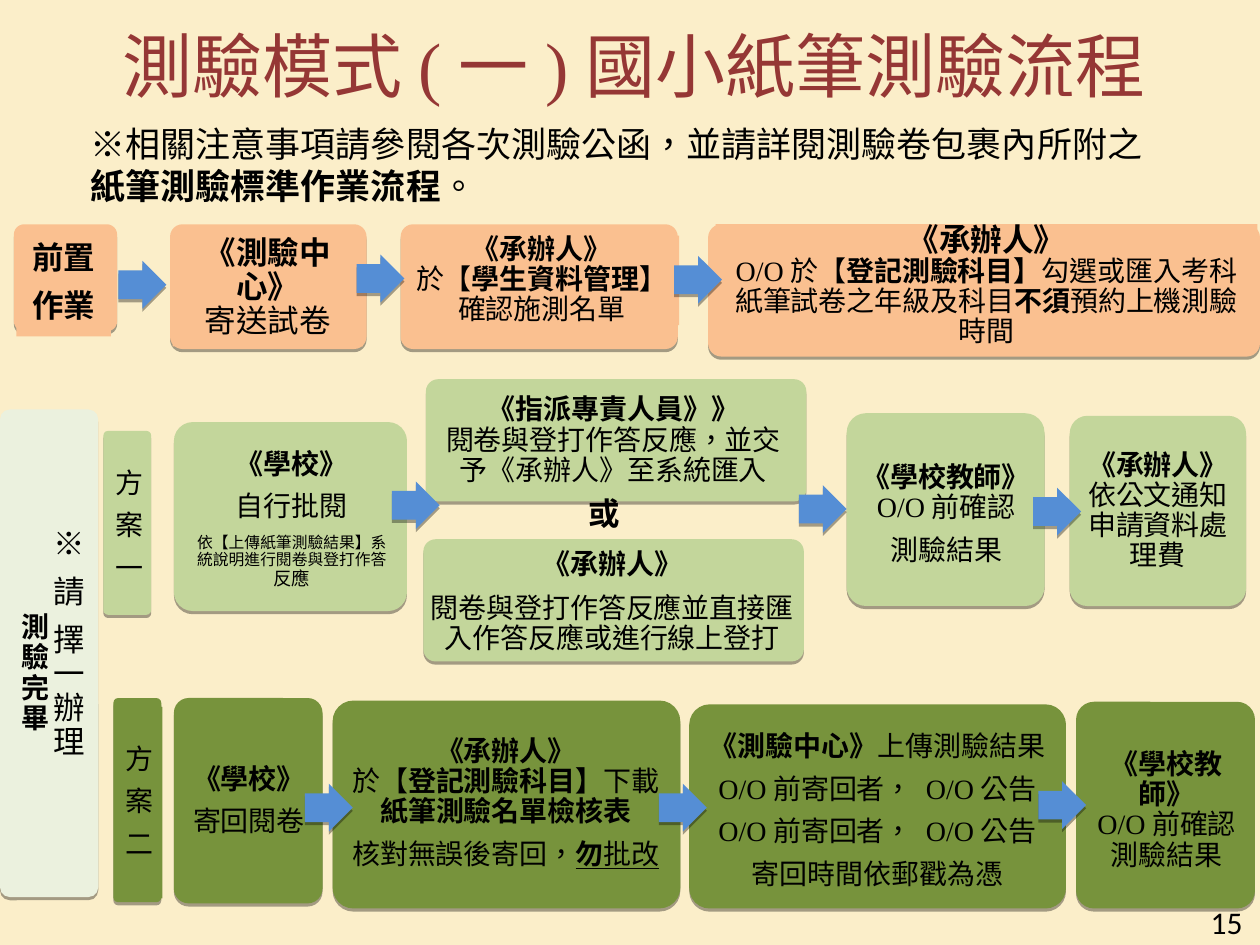
from lxml import etree
from pptx import Presentation
from pptx.dml.color import RGBColor
from pptx.enum import shapes, text
from pptx.oxml import ns
from pptx.util import Pt

PX = 9144


class Theme:
    page, title, ink = "FBEEC9", "953735", "000000"
    prep, plan_one, plan_two = "FAC090", "C3D69B", "77933C"
    sidebar, arrow = "EBF1DE", "558ED5"
    cjk, serif, sans = "Noto Sans CJK SC", "Times New Roman", "Calibri"
    heading, note, large, body = Pt(40), Pt(20), Pt(18), Pt(16)
    marks = {
        "*": {"bold": True},
        "_": {"underline": True},
        "^": {"size": large},
        "-": {"size": Pt(9)},
        "~": {"size": Pt(10.5)},
    }


PLAIN = {}
OPEN = {"line_spacing": 0.9, "space_after": Pt(7)}
WIDE = {"line_spacing": 0.9, "space_after": Pt(8)}
TIGHT = {"line_spacing": Pt(17), "space_after": Pt(0)}
TIGHT_END = {"line_spacing": Pt(17), "space_after": Pt(7)}
CENTER = text.PP_ALIGN.CENTER


def emu(box):
    return [length * PX for length in box]


def within(box, part):
    return (box[0] + part[0], box[1] + part[1], *part[2:])


def paint(fill, color):
    fill.solid()
    fill.fore_color.rgb = RGBColor.from_string(color)


def apply(target, values):
    for name, value in values.items():
        setattr(target, name, value)


def add_shadow(shape):
    effects = etree.SubElement(shape.element.spPr, ns.qn("a:effectLst"))
    shadow = etree.SubElement(effects, ns.qn("a:outerShdw"), dist="23000",
                              dir="5400000", rotWithShape="0")
    black = etree.SubElement(shadow, ns.qn("a:srgbClr"), val=Theme.ink)
    etree.SubElement(black, ns.qn("a:alpha"), val="35000")


def add_run(paragraph, marked, size, face, color):
    style = {"size": size, "bold": False}
    while marked[0] in Theme.marks:
        style.update(Theme.marks[marked[0]])
        marked = marked[1:]
    run = paragraph.add_run()
    run.text = marked.rstrip("\n")
    style["name"] = Theme.serif if marked.startswith("O/O") else face
    apply(run.font, style)
    run.font.color.rgb = RGBColor.from_string(color)
    properties = run.font._element
    properties.set("lang", "zh-TW")
    east_asian = etree.SubElement(properties, ns.qn("a:ea"), typeface=Theme.cjk)
    properties.find(ns.qn("a:latin")).addnext(east_asian)
    if marked.endswith("\n"):
        paragraph.add_line_break()


def write(shape, paragraphs, align=CENTER, size=Theme.body, face=Theme.cjk,
          color=Theme.ink, anchor=text.MSO_ANCHOR.MIDDLE, inset=None):
    frame = shape.text_frame
    apply(frame, {"word_wrap": True, "vertical_anchor": anchor})
    if inset is not None:
        for side in ("left", "top", "right", "bottom"):
            setattr(frame, f"margin_{side}", inset * PX)
    for index, (spacing, content) in enumerate(paragraphs):
        paragraph = frame.add_paragraph() if index else frame.paragraphs[0]
        apply(paragraph, {"alignment": align, **spacing})
        for marked in content.split("|"):
            add_run(paragraph, marked, size, face, color)


def add_block(parent, kind, box, color):
    block = parent.add_shape(kind, *emu(box))
    block.shadow.inherit = False
    paint(block.fill, color)
    block.line.fill.background()
    return block


def add_card(slide, box, inner, color, paragraphs, filled=True):
    parts = slide.shapes.add_group_shape().shapes
    back = add_block(parts, shapes.MSO_SHAPE.ROUNDED_RECTANGLE, box, color)
    back.adjustments[0] = 0.1
    back.element.spPr.remove(back.element.spPr.find(ns.qn("a:effectLst")))
    add_shadow(back)
    label_box = within(box, inner)
    if filled:
        label = add_block(parts, shapes.MSO_SHAPE.RECTANGLE, label_box, color)
    else:
        label = parts.add_textbox(*emu(label_box))
    write(label, paragraphs, inset=8)


def add_arrows(slide, region, corners):
    for corner in corners:
        arrow = add_block(slide.shapes, shapes.MSO_SHAPE.RIGHT_ARROW,
                          within(region, (*corner, 38, 38)), Theme.arrow)
        arrow.adjustments[0], arrow.adjustments[1] = 0.6, 0.5
        arrow.element.spPr.remove(arrow.element.spPr.find(ns.qn("a:effectLst")))
        add_shadow(arrow)


def add_row(slide, region, color, cards, arrows):
    for box, inner, filled, paragraphs in cards:
        add_card(slide, within(region, box), inner, color, paragraphs, filled)
    add_arrows(slide, region, arrows)


def add_header(slide, region):
    title = slide.shapes.title
    apply(title, dict(zip(("left", "top", "width", "height"),
                          emu(within(region, (0, 0, 900, 112))))))
    write(title, [(PLAIN, "測驗模式(一)國小紙筆測驗流程")], size=Theme.heading,
          face=Theme.serif, color=Theme.title)
    note = slide.shapes.add_textbox(*emu(within(region, (9, 97, 882, 108))))
    write(note, [(PLAIN, "※相關注意事項請參閱各次測驗公函，並請詳閱測驗卷包裹內所附之|"
                         "*紙筆測驗標準作業流程|。")],
          text.PP_ALIGN.LEFT, Theme.note, Theme.serif, anchor=text.MSO_ANCHOR.TOP)


def add_preparation(slide, region):
    add_row(slide, region, Theme.prep, [
        ((11, 0, 82, 85), (2, 4, 75, 85), True,
         [(WIDE, "*^前置"), (WIDE, "*^作業")]),
        ((135, 0, 156, 99), (2, 4, 151, 93), True,
         [(WIDE, "*^《測驗中心》\n|^寄送試卷")]),
        ((318, 0, 220, 99), (3, 9, 218, 71), True,
         [(TIGHT, "*《承辦人》\n|於【|*學生資料管理】"), (TIGHT, "確認施測名單")]),
        ((562, 0, 438, 105), (6, 0, 430, 100), True,
         [(TIGHT, "*^《承辦人》\n|O/O|於【|*登記測驗科目】|勾選或匯入考科"),
          (TIGHT_END, "紙筆試卷之年級及科目|*不須|預約上機測驗時間")]),
    ], [(94, 29), (283, 24), (535, 25)])


def add_plan_one(slide, region):
    add_row(slide, region, Theme.plan_one, [
        ((82, 41, 38, 146), (2, 7, 37, 138), False,
         [(OPEN, character) for character in "方案一"]),
        ((138, 34, 185, 150), (8, 7, 171, 141), False,
         [(OPEN, "*《學校》"), (OPEN, "自行批閱"),
          (OPEN, "-依【上傳紙筆測驗結果】系統說明進行閱卷與登打作答|~反應")]),
        ((338, 0, 302, 97), (6, 2, 286, 94), False,
         [(WIDE, "*《指派專責人員》》\n|閱卷與登打作答反應，並交予《承辦人》至系統匯入")]),
        ((336, 127, 302, 97), (-7, 3, 314, 94), False,
         [(WIDE, "*《承辦人》"),
          (WIDE, "閱卷與登打作答反應並直接匯入作答反應或進行線上登打")]),
        ((672, 27, 157, 153), (4, 21, 150, 119), False,
         [(OPEN, "*《學校教師》\n|O/O|前確認"), (OPEN, "測驗結果")]),
        ((849, 29, 140, 151), (3, 5, 134, 142), False,
         [(TIGHT, "*《承辦人》\n|依公文通知"), (OPEN, "申請資料處理費")]),
    ], [(311, 81), (634, 84), (820, 86)])
    either = slide.shapes.add_textbox(*emu(within(region, (457, 86, 42, 40))))
    write(either, [(PLAIN, "*^或")], text.PP_ALIGN.LEFT,
          anchor=text.MSO_ANCHOR.TOP)


def add_plan_two(slide, region):
    mailing = (OPEN, "O/O|前寄回者， |O/O|公告")
    add_row(slide, region, Theme.plan_two, [
        ((90, 0, 38, 162), (2, 7, 37, 152), True,
         [(OPEN, character) for character in "方案二"]),
        ((138, 0, 118, 163), (5, 5, 109, 154), True,
         [(OPEN, "*《學校》"), (OPEN, "寄回閱卷")]),
        ((264, 2, 276, 165), (5, 13, 265, 138), True,
         [(OPEN, "*《承辦人》\n|於【|*登記測驗科目】|下載|*紙筆測驗名單檢核表"),
          (WIDE, "核對無誤後寄回，|*_勿|_批改")]),
        ((547, 5, 299, 162), (6, 14, 287, 142), True,
         [(OPEN, "*《測驗中心》|上傳測驗結果"), mailing, mailing,
          (OPEN, "寄回時間依郵戳為憑")]),
        ((854, 3, 142, 164), (7, 23, 130, 127), True,
         [(OPEN, "*《學校教師》\n|O/O前確認測驗結果")]),
    ], [(242, 68), (523, 68), (824, 66)])


def add_sidebar(slide, region):
    add_card(slide, region, (32, 57, 46, 258), Theme.sidebar,
             [(WIDE, "^※"), (WIDE, "^請"), (WIDE, "^擇一辦理")], False)
    finished = slide.shapes.add_textbox(*emu(within(region, (3, 107, 50, 206))))
    write(finished, [(OPEN, "*測驗完畢")], inset=8)


def add_page_number(slide, region):
    number = slide.shapes.add_textbox(*emu(region))
    write(number, [(PLAIN, "15")], text.PP_ALIGN.RIGHT, Theme.large, Theme.sans)


def main():
    deck = Presentation()
    deck.slide_width, deck.slide_height = emu((1000, 750))
    slide = deck.slides.add_slide(deck.slide_layouts[5])
    paint(slide.background.fill, Theme.page)
    add_header(slide, (53, -5, 900, 205))
    add_preparation(slide, (0, 178, 1000, 105))
    add_plan_one(slide, (0, 301, 1000, 224))
    add_plan_two(slide, (0, 554, 1000, 167))
    add_sidebar(slide, (0, 325, 78, 387))
    add_page_number(slide, (763, 712, 233, 40))
    deck.save("out.pptx")


if __name__ == "__main__":
    main()
